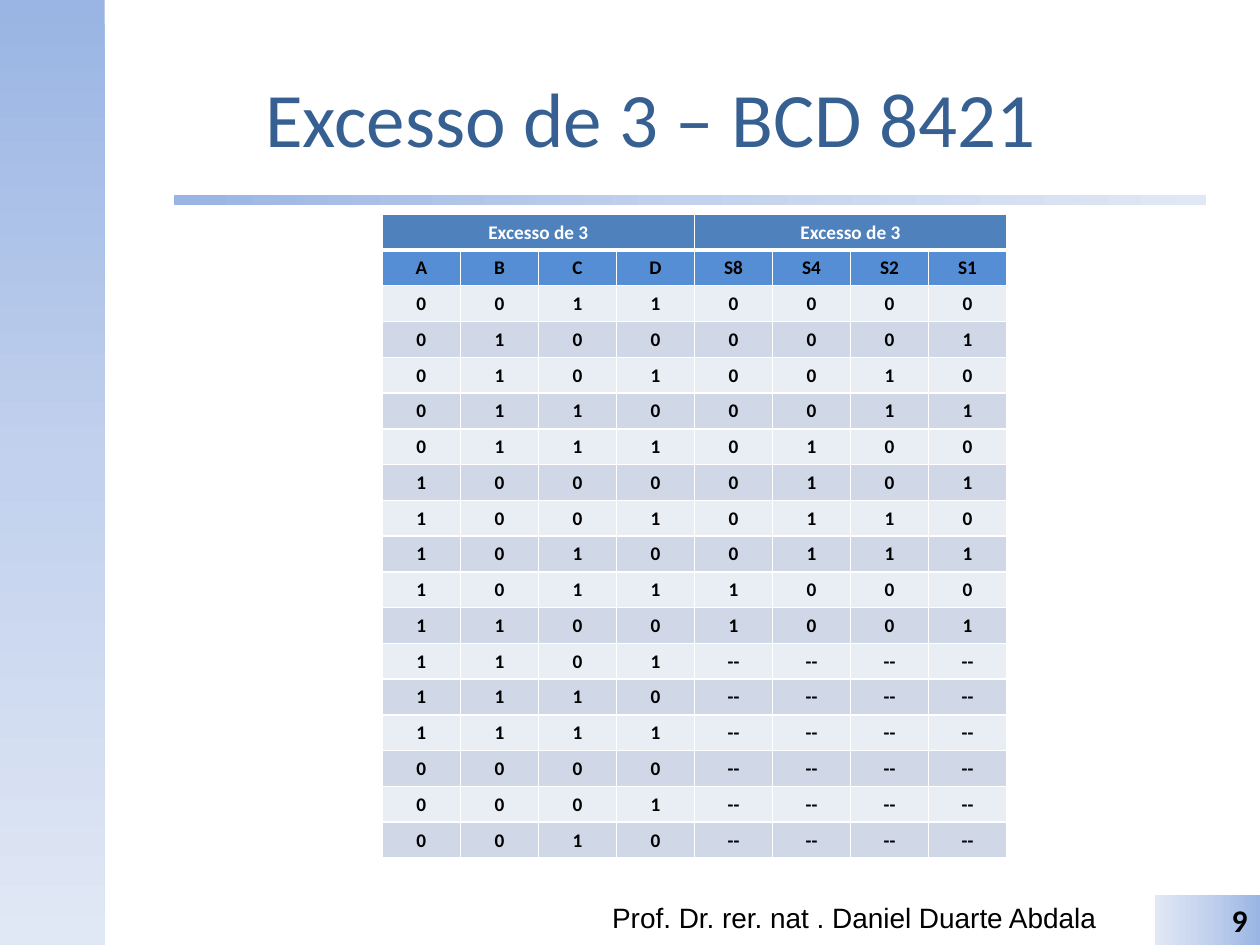
import dataclasses

import lxml.etree
import pptx
import pptx.dml.color
import pptx.enum.shapes
import pptx.enum.text
import pptx.oxml.ns
import pptx.util

Pt = pptx.util.Pt
RGB = pptx.dml.color.RGBColor.from_string
ALIGN = pptx.enum.text.PP_ALIGN
ANCHOR = pptx.enum.text.MSO_ANCHOR
SHAPE = pptx.enum.shapes.MSO_SHAPE
qualified = pptx.oxml.ns.qn


@dataclasses.dataclass(frozen=True)
class Theme:
    heading_font: str = "Calibri"
    footer_font: str = "Arial"
    title_size: float = 44
    footer_size: float = 16
    number_size: float = 18
    table_size: float = 11
    title: str = "376092"
    text: str = "000000"
    white: str = "FFFFFF"
    group_fill: str = "4F81BD"
    column_fill: str = "558ED5"
    bands: tuple = ("E9EDF4", "D0D8E8")
    gradient: tuple = ((0, "9AB5E4"), (50, "C2D1ED"), (100, "E1E8F5"))


def set_attributes(target, values):
    for name, value in values.items():
        setattr(target, name, value)


def add_element(parent, tag, **attributes):
    return lxml.etree.SubElement(parent, qualified(tag), attributes)


class SlideBuilder:
    def __init__(self, slide, theme):
        self.slide = slide
        self.theme = theme

    def fill_text(self, frame, text, size, color, font=None, bold=False,
                  alignment=ALIGN.CENTER, anchor=ANCHOR.TOP):
        set_attributes(frame, {"word_wrap": True, "vertical_anchor": anchor})
        paragraph = frame.paragraphs[0]
        paragraph.alignment = alignment
        run = paragraph.add_run()
        run.text = text
        set_attributes(run.font, {
            "name": font or self.theme.heading_font,
            "size": Pt(size),
            "bold": bold,
        })
        run.font.color.rgb = RGB(color)

    def text_box(self, box, text, size, color, **style):
        shape = self.slide.shapes.add_textbox(*map(Pt, box))
        self.fill_text(shape.text_frame, text, size, color, **style)

    def gradient_shape(self, kind, box, angle):
        shape = self.slide.shapes.add_shape(kind, *map(Pt, box))
        shape.shadow.inherit = False
        shape.line.fill.background()
        gradient = lxml.etree.Element(qualified("a:gradFill"), rotWithShape="1")
        stops = add_element(gradient, "a:gsLst")
        for position, color in self.theme.gradient:
            stop = add_element(stops, "a:gs", pos=str(position * 1000))
            add_element(stop, "a:srgbClr", val=color)
        add_element(gradient, "a:lin", ang=str(angle * 60000), scaled="0")
        shape.element.spPr.find(qualified("a:prstGeom")).addnext(gradient)
        return shape

    def style_cell(self, cell, fill, top=1, bottom=1):
        properties = cell._tc.get_or_add_tcPr()
        for side, width in (("L", 1), ("R", 1), ("T", top), ("B", bottom)):
            line = add_element(properties, "a:ln" + side, w=str(int(Pt(width))))
            solid = add_element(line, "a:solidFill")
            add_element(solid, "a:srgbClr", val=self.theme.white)
        cell.fill.solid()
        cell.fill.fore_color.rgb = RGB(fill)

    def table(self, left, top, column_width, row_height, groups, columns, rows):
        theme = self.theme
        body = [columns, *rows]
        count = len(columns)
        span = count // len(groups)
        table = self.slide.shapes.add_table(
            len(body) + 1, count, Pt(left), Pt(top),
            Pt(column_width * count), Pt(row_height * (len(body) + 1))).table
        set_attributes(table, {"first_row": False, "horz_banding": False})
        for column in table.columns:
            column.width = Pt(column_width)
        for row in table.rows:
            row.height = Pt(row_height)
        for index in range(count):
            self.style_cell(table.cell(0, index), theme.group_fill, bottom=3)
        for index, group in enumerate(groups):
            first = table.cell(0, index * span)
            first.merge(table.cell(0, (index + 1) * span - 1))
            self.fill_text(first.text_frame, group, theme.table_size, theme.white, bold=True)
        for row_index, values in enumerate(body, start=1):
            is_header = row_index == 1
            fill = theme.column_fill if is_header else theme.bands[row_index % 2]
            for column_index, value in enumerate(values):
                cell = table.cell(row_index, column_index)
                self.style_cell(cell, fill, top=3 if is_header else 1)
                self.fill_text(cell.text_frame, value, theme.table_size, theme.text, bold=True)


def truth_table(offset=3, size=16, digits=10):
    return [
        [*f"{(value + offset) % size:04b}"]
        + ([*f"{value:04b}"] if value < digits else ["--"] * 4)
        for value in range(size)
    ]


def main():
    presentation = pptx.Presentation()
    set_attributes(presentation, {"slide_width": Pt(720), "slide_height": Pt(540)})
    theme = Theme()
    builder = SlideBuilder(
        presentation.slides.add_slide(presentation.slide_layouts[6]), theme)

    builder.gradient_shape(SHAPE.RECTANGLE, (0, 0, 59.8, 540), 90)
    rule = builder.gradient_shape(SHAPE.ROUNDED_RECTANGLE, (99.4, 111.6, 589.7, 5.8), 0)
    rule.adjustments[0] = 0
    builder.text_box((59.8, 21.6, 624.2, 90), "Excesso de 3 – BCD 8421",
                     theme.title_size, theme.title, anchor=ANCHOR.MIDDLE)
    builder.text_box((342.7, 511.2, 301.7, 28.8), "Prof. Dr. rer. nat . Daniel Duarte Abdala",
                     theme.footer_size, theme.text, font=theme.footer_font,
                     alignment=ALIGN.LEFT)
    number = builder.gradient_shape(SHAPE.RECTANGLE, (660.2, 511.2, 59.8, 28.8), 180)
    builder.fill_text(number.text_frame, "9", theme.number_size, theme.text,
                      bold=True, alignment=ALIGN.RIGHT)
    builder.table(218.5, 122.4, 44.6, 20.4, ["Excesso de 3"] * 2,
                  ["A", "B", "C", "D", "S8", "S4", "S2", "S1"], truth_table())

    presentation.save("out.pptx")


if __name__ == "__main__":
    main()
